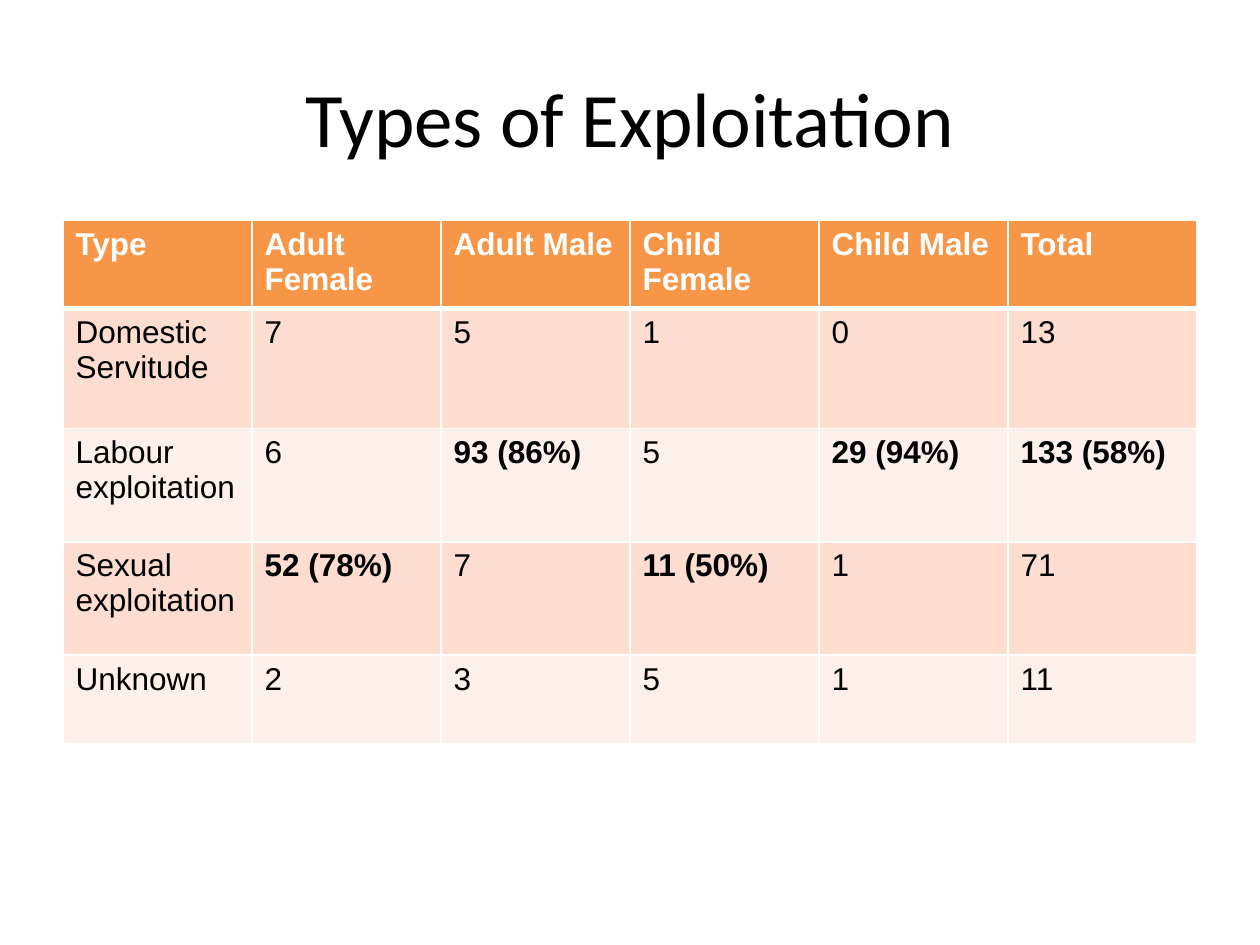
from lxml.etree import SubElement
from pptx import Presentation
from pptx.dml.color import RGBColor
from pptx.enum.text import MSO_ANCHOR, PP_ALIGN
from pptx.oxml.ns import qn
from pptx.util import Inches, Pt

HEADING = "Types of Exploitation"
ROWS = [
    ("Type", "Adult Female", "Adult Male", "Child Female", "Child Male", "Total"),
    ("Domestic Servitude", "7", "5", "1", "0", "13"),
    ("Labour exploitation", "6", "93 (86%)", "5", "29 (94%)", "133 (58%)"),
    ("Sexual exploitation", "52 (78%)", "7", "11 (50%)", "1", "71"),
    ("Unknown", "2", "3", "5", "1", "11"),
]
ROW_HEIGHTS = [0.7, 0.95, 0.9, 0.9, 0.7]
COLUMN_WIDTH = 1.5
LEFT, TABLE_TOP = 0.5, 1.75
WIDTH = COLUMN_WIDTH * len(ROWS[0])
HEADER_FILL = "F79646"
BAND_FILLS = ["FDEFE9", "FCDDCF"]
WHITE, BLACK = "FFFFFF", "000000"


def paint(color_format, hex_color):
    color_format.rgb = RGBColor.from_string(hex_color)


def add_run(paragraph, text, font_name, size, color, bold=False):
    run = paragraph.add_run()
    run.text = text
    run.font.name = font_name
    run.font.size = Pt(size)
    run.font.bold = bold
    paint(run.font.color, color)


def add_borders(cell, widths):
    properties = cell._tc.get_or_add_tcPr()
    for side, width in widths.items():
        line = SubElement(properties, qn(f"a:ln{side}"), w=str(Pt(width)))
        fill = SubElement(line, qn("a:solidFill"))
        SubElement(fill, qn("a:srgbClr"), val=WHITE)


def format_cell(cell, text, row_index):
    is_header = row_index == 0
    add_borders(cell, {
        "L": 1,
        "R": 1,
        "T": 3 if row_index == 1 else 1,
        "B": 3 if is_header else 1,
    })
    cell.fill.solid()
    paint(cell.fill.fore_color, HEADER_FILL if is_header else BAND_FILLS[row_index % 2])
    add_run(cell.text_frame.paragraphs[0], text, "Arial", 18,
            WHITE if is_header else BLACK, is_header or "%" in text)


def main():
    presentation = Presentation()
    presentation.slide_width, presentation.slide_height = Inches(10), Inches(7.5)
    slide = presentation.slides.add_slide(presentation.slide_layouts[5])

    heading = slide.shapes.title
    heading.left, heading.top = Inches(LEFT), Inches(0.3)
    heading.width, heading.height = Inches(WIDTH), Inches(1.25)
    heading.text_frame.vertical_anchor = MSO_ANCHOR.MIDDLE
    heading_paragraph = heading.text_frame.paragraphs[0]
    heading_paragraph.alignment = PP_ALIGN.CENTER
    add_run(heading_paragraph, HEADING, "Calibri", 44, BLACK)

    exploitation = slide.shapes.add_table(
        len(ROWS), len(ROWS[0]), Inches(LEFT), Inches(TABLE_TOP),
        Inches(WIDTH), Inches(sum(ROW_HEIGHTS))).table
    for column in exploitation.columns:
        column.width = Inches(COLUMN_WIDTH)
    for row_index, (values, height) in enumerate(zip(ROWS, ROW_HEIGHTS)):
        exploitation.rows[row_index].height = Inches(height)
        for column_index, value in enumerate(values):
            format_cell(exploitation.cell(row_index, column_index), value, row_index)

    presentation.save("out.pptx")


if __name__ == "__main__":
    main()
